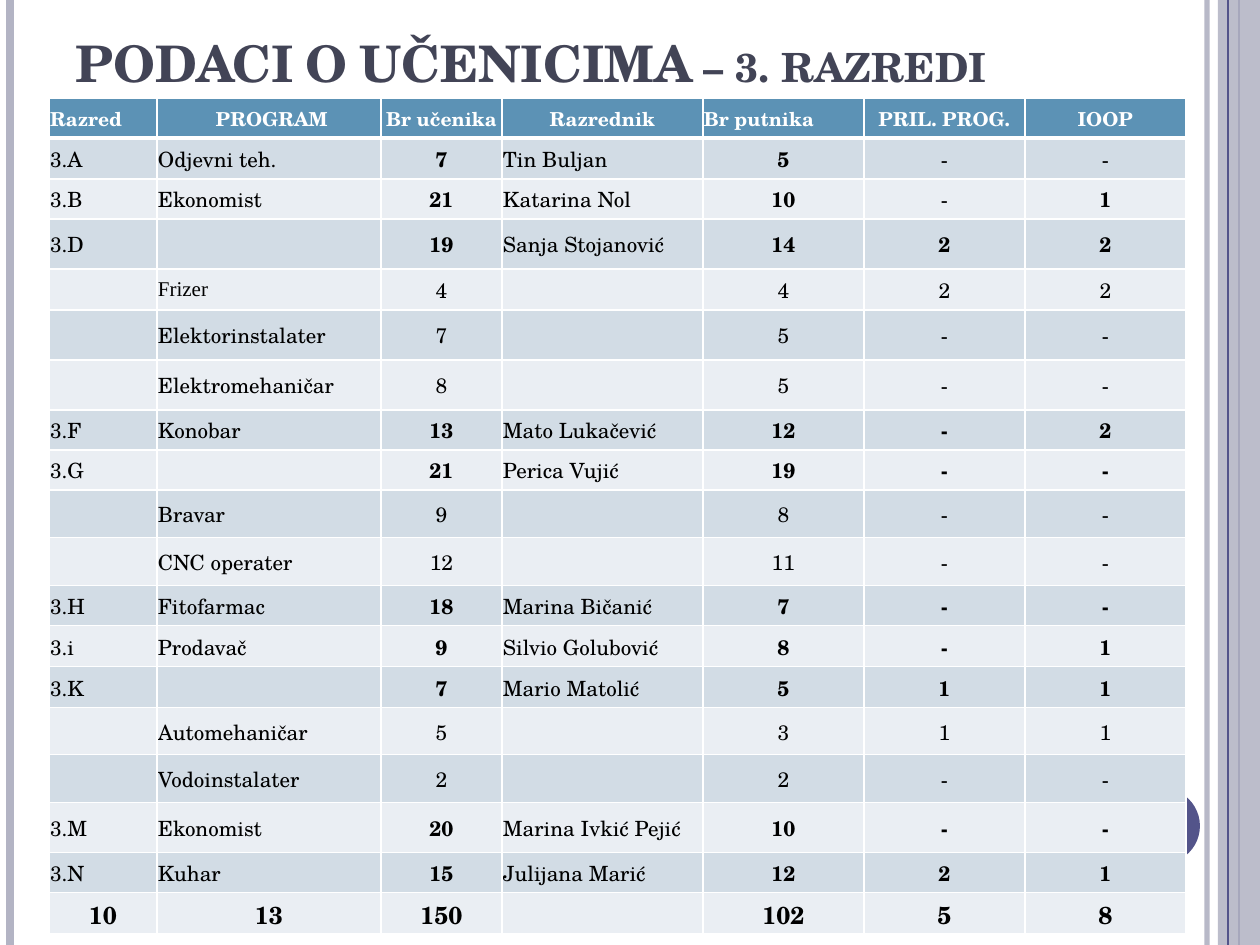
from typing import NamedTuple, Optional

import lxml.etree
import pptx
import pptx.dml.color
import pptx.enum.shapes
import pptx.enum.text
import pptx.oxml.ns
import pptx.util

EMU_PER_PX = 914400 // 126
SERIF = "TeX Gyre Schola"
BAND_DARK, BAND_LIGHT, HEADER_FILL = "D2DCE5", "EAEEF3", "5C92B5"
WHITE, BLACK, GREY, INDIGO = "FFFFFF", "000000", "B3B4C4", "53548A"
ALIGN = pptx.enum.text.PP_ALIGN
ANCHOR = pptx.enum.text.MSO_ANCHOR

COLUMN_WIDTHS = [108, 224, 121, 201, 161, 161, 161]
ROW_HEIGHTS = [40, 41, 40, 50, 41, 50, 50, 40, 40, 48,
               48, 40, 41, 41, 47, 48, 50, 40, 41]
HEADERS = ["Razred", " PROGRAM", "Br učenika", "Razrednik",
           "Br putnika", "PRIL. PROG.", "IOOP"]
TOTALS = ["10", "13", "150", "", "102", "5", "8"]
LEFT_HEADERS = {0, 4}
TEXT_COLUMNS = {0, 1, 3}
PLAIN_DASH_CLASSES = {"3.A", "3.B"}


class ClassRow(NamedTuple):
    """One class, or one programme inside a mixed class when name is empty."""
    name: str
    program: str
    students: str
    teacher: str
    commuters: str
    adapted: str
    individual: str


CLASS_ROWS = [
    ClassRow("3.A", "Odjevni teh.", "7", "Tin Buljan", "5", "-", "-"),
    ClassRow("3.B", "Ekonomist", "21", "Katarina Nol", "10", "-", "1"),
    ClassRow("3.D", "", "19", "Sanja Stojanović", "14", "2", "2"),
    ClassRow("", "Frizer", "4", "", "4", "2", "2"),
    ClassRow("", "Elektorinstalater", "7", "", "5", "-", "-"),
    ClassRow("", "Elektromehaničar", "8", "", "5", "-", "-"),
    ClassRow("3.F", "Konobar", "13", "Mato Lukačević", "12", "-", "2"),
    ClassRow("3.G", "", "21", "Perica Vujić", "19", "-", "-"),
    ClassRow("", "Bravar", "9", "", "8", "-", "-"),
    ClassRow("", "CNC operater", "12", "", "11", "-", "-"),
    ClassRow("3.H", "Fitofarmac", "18", "Marina Bičanić", "7", "-", "-"),
    ClassRow("3.i", "Prodavač", "9", "Silvio Golubović", "8", "-", "1"),
    ClassRow("3.K", "", "7", "Mario Matolić", "5", "1", "1"),
    ClassRow("", "Automehaničar", "5", "", "3", "1", "1"),
    ClassRow("", "Vodoinstalater", "2", "", "2", "-", "-"),
    ClassRow("3.M", "Ekonomist", "20", "Marina Ivkić Pejić", "10", "-", "-"),
    ClassRow("3.N", "Kuhar", "15", "Julijana Marić", "12", "2", "1"),
]


class Stripe(NamedTuple):
    x: int
    color: str
    width: float
    opacity: Optional[int] = None


class CellStyle(NamedTuple):
    fill: str
    color: str
    size: int
    bold: bool
    centered: bool
    font: str = SERIF
    anchor: ANCHOR = ANCHOR.MIDDLE
    bottom_border: int = 1


def px(length: int) -> pptx.util.Emu:
    return pptx.util.Emu(length * EMU_PER_PX)


def rgb(color: str) -> pptx.dml.color.RGBColor:
    return pptx.dml.color.RGBColor.from_string(color)


def add_child(parent, tag: str, **attributes: str):
    return lxml.etree.SubElement(parent, pptx.oxml.ns.qn(tag), attributes)


def set_opacity(element, percent: int) -> None:
    color = next(element.iter(pptx.oxml.ns.qn("a:srgbClr")))
    add_child(color, "a:alpha", val=str(percent * 1000))


def add_stripe(slide, stripe: Stripe) -> None:
    """Draw a vertical line over the full slide height."""
    line = slide.shapes.add_connector(
        pptx.enum.shapes.MSO_CONNECTOR.STRAIGHT,
        px(stripe.x), px(0), px(stripe.x), px(945))
    line.line.color.rgb = rgb(stripe.color)
    line.line.width = pptx.util.Pt(stripe.width)
    if stripe.opacity is not None:
        set_opacity(line.line._ln, stripe.opacity)
    add_child(line._element.spPr, "a:effectLst")


def add_filled_shape(slide, kind, left: int, top: int, width: int, height: int, color: str):
    shape = slide.shapes.add_shape(kind, px(left), px(top), px(width), px(height))
    shape.shadow.inherit = False
    shape.fill.solid()
    shape.fill.fore_color.rgb = rgb(color)
    shape.line.fill.background()
    return shape


def add_frame(slide) -> None:
    """Draw the stripes, side band and disc around the content."""
    shapes = pptx.enum.shapes.MSO_SHAPE
    for stripe in [Stripe(1207, GREY, 3, 93), Stripe(10, GREY, 4.5), Stripe(1239, INDIGO, 1.5)]:
        add_stripe(slide, stripe)
    band = add_filled_shape(slide, shapes.RECTANGLE, 1218, 0, 42, 945, GREY)
    set_opacity(band._element.spPr, 87)
    add_stripe(slide, Stripe(1228, INDIGO, 0.75))
    add_filled_shape(slide, shapes.OVAL, 1124, 788, 76, 76, INDIGO)


def add_title(slide, text: str) -> None:
    box = slide.shapes.add_textbox(px(63), px(20), px(1092), px(79))
    box.text_frame.word_wrap = True
    box.text_frame.vertical_anchor = ANCHOR.BOTTOM
    paragraph = box.text_frame.paragraphs[0]
    run = paragraph.add_run()
    run.text = text
    run.font.name = SERIF
    run.font.size = pptx.util.Pt(28.8)
    run.font.bold = True
    run.font.color.rgb = rgb("424456")
    run.font._element.set("cap", "small")


def set_borders(cell, bottom_width: int) -> None:
    properties = cell._tc.get_or_add_tcPr()
    for index, side in enumerate("LRTB"):
        width = bottom_width if side == "B" else 1
        line = add_child(properties, f"a:ln{side}", w=str(pptx.util.Pt(width)))
        add_child(add_child(line, "a:solidFill"), "a:srgbClr", val=WHITE)
        properties.insert(index, line)


def fill_cell(cell, text: str, style: CellStyle) -> None:
    cell.fill.solid()
    cell.fill.fore_color.rgb = rgb(style.fill)
    cell.margin_left = cell.margin_right = cell.margin_top = px(1)
    cell.margin_bottom = 0
    cell.vertical_anchor = style.anchor
    set_borders(cell, style.bottom_border)
    cell.text = text
    paragraph = cell.text_frame.paragraphs[0]
    paragraph.alignment = ALIGN.CENTER if style.centered else ALIGN.LEFT
    paragraph.font.name = style.font
    paragraph.font.size = pptx.util.Pt(style.size)
    paragraph.font.bold = style.bold
    paragraph.font.color.rgb = rgb(style.color)


def class_style(row: ClassRow, column: int, fill: str) -> CellStyle:
    is_number = column not in TEXT_COLUMNS
    plain_dash = row[column] == "-" and row.name in PLAIN_DASH_CLASSES
    bold = is_number and bool(row.name) and not plain_dash
    font = "Times New Roman" if row[column] == "Frizer" else SERIF
    return CellStyle(fill, BLACK, 12, bold, is_number, font)


def add_class_table(slide) -> None:
    table = slide.shapes.add_table(
        len(ROW_HEIGHTS), len(COLUMN_WIDTHS), px(49), px(98),
        px(sum(COLUMN_WIDTHS)), px(sum(ROW_HEIGHTS))).table
    for row, height in zip(table.rows, ROW_HEIGHTS):
        row.height = px(height)
    for index, width in enumerate(COLUMN_WIDTHS):
        table.columns[index].width = px(width)
        header = CellStyle(HEADER_FILL, WHITE, 11, True,
                           index not in LEFT_HEADERS, bottom_border=3)
        fill_cell(table.cell(0, index), HEADERS[index], header)
        for number, row in enumerate(CLASS_ROWS, start=1):
            fill = BAND_DARK if number % 2 else BAND_LIGHT
            fill_cell(table.cell(number, index), row[index], class_style(row, index, fill))
        total = CellStyle(BAND_LIGHT, BLACK, 14, True, True, anchor=ANCHOR.BOTTOM)
        fill_cell(table.cell(len(ROW_HEIGHTS) - 1, index), TOTALS[index], total)


def main() -> None:
    presentation = pptx.Presentation()
    presentation.slide_width, presentation.slide_height = px(1260), px(945)
    slide = presentation.slides.add_slide(presentation.slide_layouts[6])
    add_frame(slide)
    add_title(slide, "PODACI O UČENICIMA – 3. razredi")
    add_class_table(slide)
    presentation.save("out.pptx")


if __name__ == "__main__":
    main()
